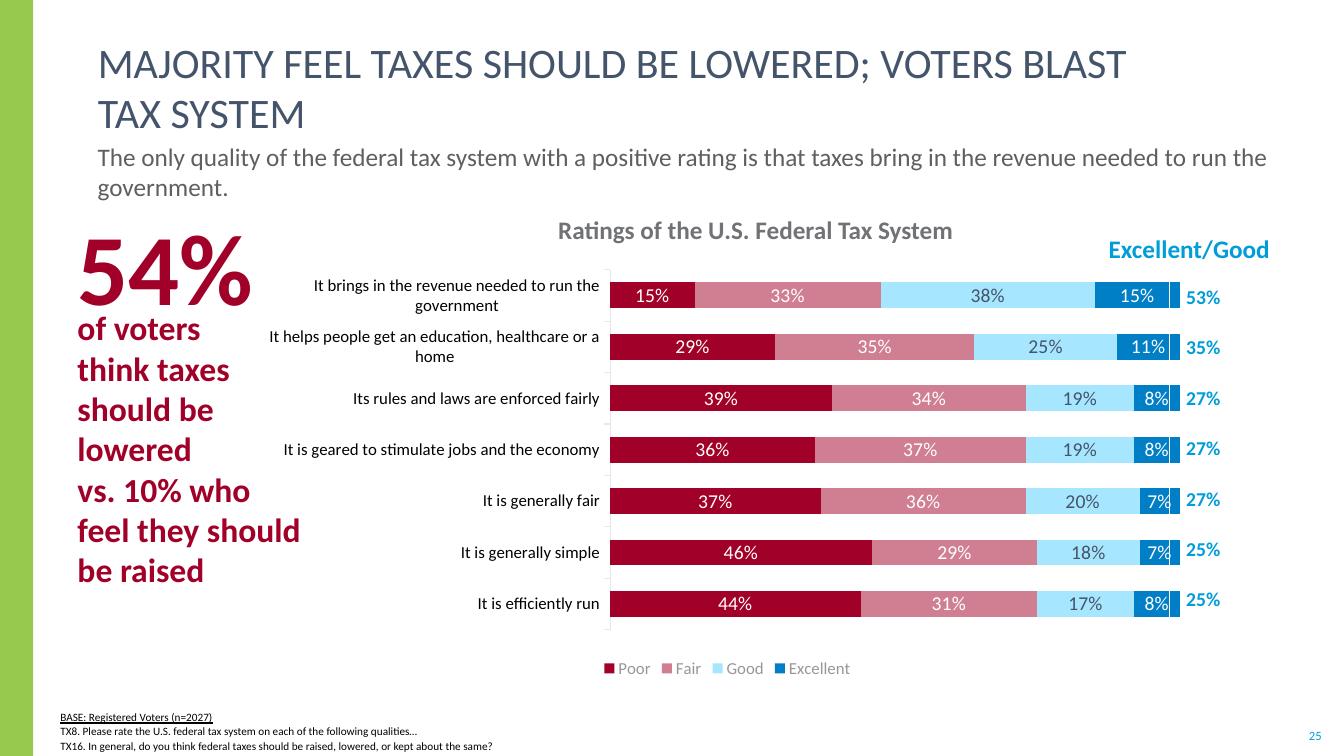
from dataclasses import dataclass

from lxml import etree
from pptx import Presentation
from pptx.chart.data import CategoryChartData
from pptx.dml.color import RGBColor
from pptx.enum import chart as ch, shapes, text
from pptx.oxml import parse_xml
from pptx.oxml.ns import nsdecls
from pptx.util import Inches, Pt


@dataclass(frozen=True)
class Theme:
    font: str = "Calibri"
    green: str = "96C94D"
    slate: str = "44546A"
    gray: str = "5F5F5F"
    heading_gray: str = "707276"
    legend_gray: str = "979797"
    axis_gray: str = "E7E7E7"
    red: str = "A10028"
    rose: str = "D07F93"
    pale_blue: str = "A7E6FF"
    blue: str = "007FC7"
    sky: str = "009DD9"
    white: str = "FFFFFF"
    black: str = "000000"
    headline: int = 30
    huge: int = 72
    callout: int = 24
    heading: int = 18
    value: int = 14
    label: int = 12
    number: int = 9
    note: int = 8


THEME = Theme()
LEFT, CENTER = text.PP_ALIGN.LEFT, text.PP_ALIGN.CENTER
TOP, MIDDLE, BOTTOM = (text.MSO_ANCHOR.TOP, text.MSO_ANCHOR.MIDDLE,
                       text.MSO_ANCHOR.BOTTOM)

QUALITIES = [
    "It brings in the revenue needed to run the government",
    "It helps people get an education, healthcare or a home",
    "Its rules and laws are enforced fairly",
    "It is geared to stimulate jobs and the economy",
    "It is generally fair",
    "It is generally simple",
    "It is efficiently run",
]
RATINGS = [
    ("Poor", (0.15, 0.29, 0.39, 0.36, 0.37, 0.46, 0.44), THEME.red, THEME.white),
    ("Fair", (0.33, 0.35, 0.34, 0.37, 0.36, 0.29, 0.31), THEME.rose, THEME.white),
    ("Good", (0.38, 0.25, 0.19, 0.19, 0.20, 0.18, 0.17), THEME.pale_blue, THEME.slate),
    ("Excellent", (0.15, 0.11, 0.08, 0.08, 0.07, 0.07, 0.08), THEME.blue, THEME.white),
]
POSITIVE = ["53%", "35%", "27%", "27%", "27%", "25%", "25%"]


def style_font(font, size, color, bold=False):
    font.name = THEME.font
    font.size = Pt(size)
    font.bold = bold
    font.color.rgb = RGBColor.from_string(color)


def write(frame, paragraphs, size, color, bold=False, align=LEFT, gap=0, underlined=()):
    for index, content in enumerate(paragraphs):
        paragraph = frame.paragraphs[0] if index == 0 else frame.add_paragraph()
        paragraph.alignment = align
        paragraph.space_before = Pt(gap if index else 0)
        for position, line in enumerate(content.split("\n")):
            if position:
                paragraph.add_line_break()
            run = paragraph.add_run()
            run.text = line
            style_font(run.font, size, color, bold)
            if index in underlined:
                run.font.underline = True


def set_frame(frame, anchor=TOP, insets=(0.1, 0.05), wrap=True):
    frame.auto_size = text.MSO_AUTO_SIZE.NONE
    frame.word_wrap = wrap
    frame.vertical_anchor = anchor
    frame.margin_left = frame.margin_right = Inches(insets[0])
    frame.margin_top = frame.margin_bottom = Inches(insets[1])


def add_text(slide, box, paragraphs, size, color, anchor=TOP, insets=(0.1, 0.05),
             wrap=True, **style):
    frame = slide.shapes.add_textbox(*map(Inches, box)).text_frame
    set_frame(frame, anchor, insets, wrap)
    write(frame, paragraphs, size, color, **style)


def set_title(slide, box, headline):
    title = slide.shapes.title
    title.left, title.top, title.width, title.height = map(Inches, box)
    set_frame(title.text_frame, BOTTOM, (0.1, 0))
    write(title.text_frame, [headline], THEME.headline, THEME.slate)


def add_side_band(slide):
    band = slide.shapes.add_shape(shapes.MSO_SHAPE.RECTANGLE, 0, 0, Inches(0.33), Inches(7.5))
    band.shadow.inherit = False
    band.fill.solid()
    band.fill.fore_color.rgb = RGBColor.from_string(THEME.green)
    band.line.fill.background()


def place_plot(chart, x, y, w, h):
    plot_area = chart.plots[0]._element.getparent()
    for old in plot_area.findall("{*}layout"):
        plot_area.remove(old)
    layout = parse_xml(f"<c:layout {nsdecls('c')}><c:manualLayout/></c:layout>")
    manual = layout[0]
    settings = {"layoutTarget": "inner", "xMode": "edge", "yMode": "edge",
                "x": x, "y": y, "w": w, "h": h}
    for tag, value in settings.items():
        namespace = etree.QName(manual).namespace
        etree.SubElement(manual, f"{{{namespace}}}{tag}").set("val", str(value))
    plot_area.insert(0, layout)


def add_ratings_chart(slide, box):
    ratings = CategoryChartData(number_format="0%")
    ratings.categories = QUALITIES
    for name, values, _, _ in RATINGS:
        ratings.add_series(name, values)
    chart = slide.shapes.add_chart(
        ch.XL_CHART_TYPE.BAR_STACKED_100, *map(Inches, box), ratings).chart
    style_font(chart.font, 10, THEME.gray)
    chart.has_title = False
    chart.has_legend = True
    chart.legend.position = ch.XL_LEGEND_POSITION.BOTTOM
    chart.legend.include_in_layout = False
    style_font(chart.legend.font, THEME.label, THEME.legend_gray)

    qualities = chart.category_axis
    qualities.reverse_order = True
    qualities.has_major_gridlines = False
    qualities.major_tick_mark = ch.XL_TICK_MARK.OUTSIDE
    qualities.format.line.color.rgb = RGBColor.from_string(THEME.axis_gray)
    qualities.format.line.width = Pt(0.75)
    style_font(qualities.tick_labels.font, THEME.label, THEME.black)
    shares = chart.value_axis
    shares.has_major_gridlines = False
    shares.minimum_scale, shares.maximum_scale = 0, 1
    shares.visible = False

    plot = chart.plots[0]
    plot.gap_width = plot.overlap = 100
    plot.vary_by_categories = False
    for series, (_, _, fill, label_color) in zip(plot.series, RATINGS):
        series.format.fill.solid()
        series.format.fill.fore_color.rgb = RGBColor.from_string(fill)
        labels = series.data_labels
        labels.show_value = True
        labels.number_format = "0%"
        labels.number_format_is_linked = False
        labels.position = ch.XL_LABEL_POSITION.CENTER
        style_font(labels.font, THEME.value, label_color)
    place_plot(chart, 0.373, 0.041, 0.616, 0.837)


def add_positive_table(slide, box):
    table = slide.shapes.add_table(len(POSITIVE), 1, *map(Inches, box)).table
    table.first_row = table.horz_banding = False
    for row, share in enumerate(POSITIVE):
        cell = table.cell(row, 0)
        cell.fill.background()
        cell.vertical_anchor = MIDDLE
        cell.margin_left = cell.margin_right = cell.margin_top = Inches(0.01)
        cell.margin_bottom = 0
        write(cell.text_frame, [share], THEME.value, THEME.sky, bold=True, align=CENTER)


def main():
    deck = Presentation()
    deck.slide_width, deck.slide_height = Inches(13.33), Inches(7.5)
    slide = deck.slides.add_slide(deck.slide_layouts[5])
    add_text(slide, (12.97, 7.22, 0.15, 0.15), ["25"], THEME.number, THEME.sky,
             anchor=MIDDLE, insets=(0, 0), wrap=False, align=CENTER)
    add_side_band(slide)
    add_ratings_chart(slide, (2.63, 2.5, 9.17, 4.27))
    set_title(slide, (0.87, 0.74, 11.91, 0.62),
              "MAJORITY FEEL TAXES SHOULD BE LOWERED; VOTERS BLAST \nTAX SYSTEM")
    add_text(slide, (0.87, 1.4, 11.9, 0.34),
             ["The only quality of the federal tax system with a positive rating is that "
              "taxes bring in the revenue needed to run the government."],
             THEME.heading, THEME.gray, insets=(0.1, 0))
    add_text(slide, (0.5, 7, 6.67, 0.53),
             ["BASE: Registered Voters (n=2027)",
              "TX8. Please rate the U.S. federal tax system on each of the following qualities…",
              "TX16. In general, do you think federal taxes should be raised, lowered, "
              "or kept about the same?"],
             THEME.note, THEME.black, gap=0.6, underlined=(0,))
    add_text(slide, (5.2, 2.08, 4.59, 0.4), ["Ratings of the U.S. Federal Tax System"],
             THEME.heading, THEME.heading_gray, bold=True, align=CENTER)
    add_positive_table(slide, (11.6, 2.7, 0.67, 3.5))
    add_text(slide, (10.89, 2.27, 1.81, 0.4), ["Excellent/Good"],
             THEME.heading, THEME.sky, wrap=False, bold=True, align=CENTER)
    add_text(slide, (0.67, 1.98, 2.14, 1.31), ["54%"], THEME.huge, THEME.red, bold=True)
    add_text(slide, (0.67, 3, 2.42, 3.33),
             ["of voters \nthink taxes should be lowered",
              "vs. 10% who feel they should be raised"],
             THEME.callout, THEME.red, bold=True)
    deck.save("out.pptx")


if __name__ == "__main__":
    main()
